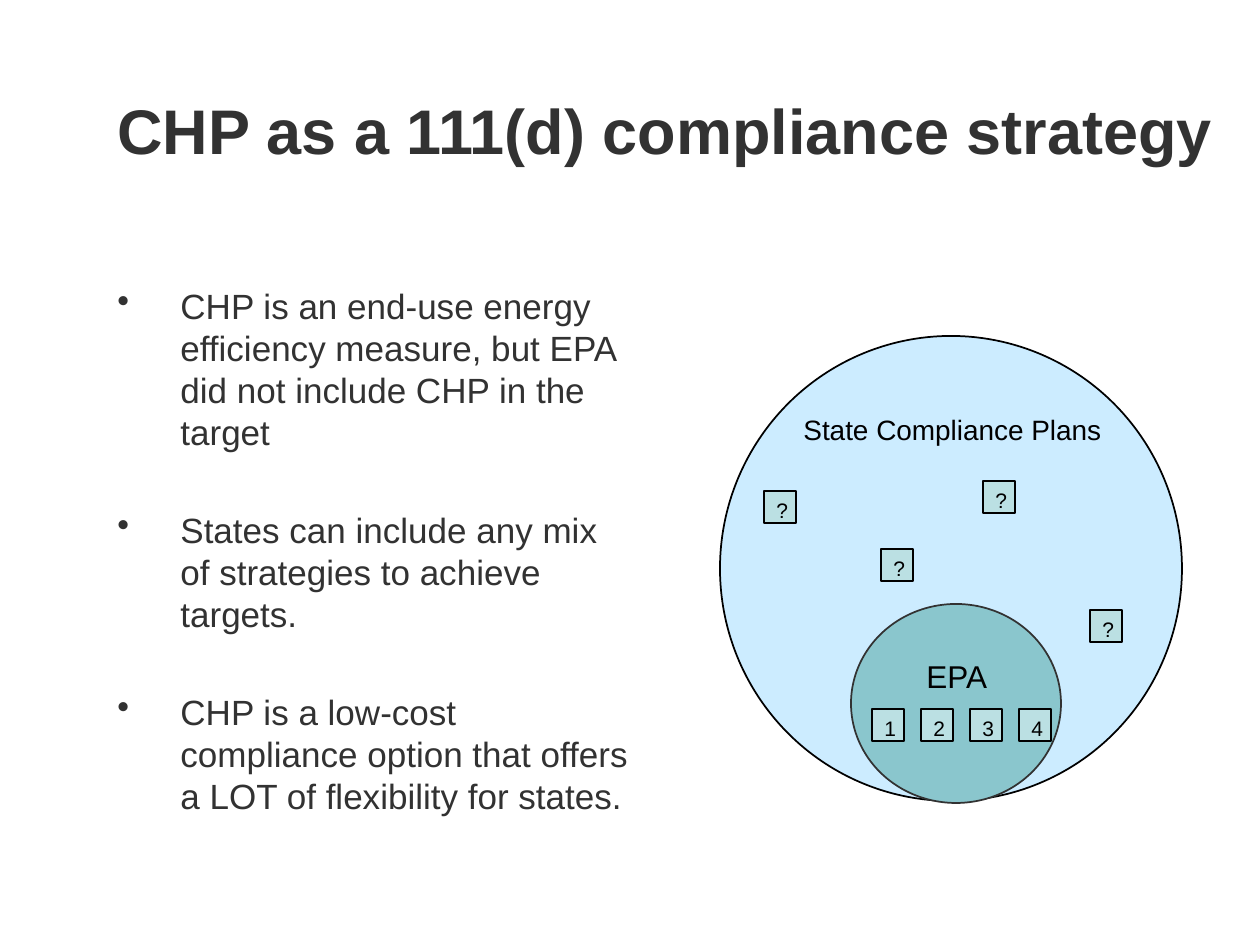
"""Build the slide on CHP as a 111(d) compliance strategy."""
from dataclasses import dataclass

import lxml.etree
import pptx
import pptx.dml.color
import pptx.enum.shapes
import pptx.enum.text
import pptx.oxml.ns
import pptx.shapes.autoshape
import pptx.slide
import pptx.util

EMU_PER_PX = 914400 / 126
TILE_SIZE = 32
TILE_PITCH = 49
INDENT = 63


@dataclass(frozen=True)
class Theme:
    font: str = "Arial"
    ink: str = "323232"
    black: str = "000000"
    state: str = "CCECFF"
    epa: str = "8AC6CD"
    tile: str = "BBE0E3"
    title_size: int = 36
    title_pitch: int = 44
    body_size: int = 20
    body_pitch: int = 24
    body_gap: int = 32
    epa_size: int = 18
    state_size: int = 16
    tile_size: int = 12
    circle_line: float = 1
    tile_line: float = 0.75


@dataclass(frozen=True)
class Box:
    left: int
    top: int
    width: int
    height: int


@dataclass(frozen=True)
class Circle:
    box: Box
    fill: str
    line: str


@dataclass(frozen=True)
class Label:
    box: Box
    text: str
    size: int


@dataclass(frozen=True)
class Tile:
    left: int
    top: int
    text: str


THEME = Theme()
TITLE = "CHP as a 111(d) compliance strategy"
BULLETS = (
    "CHP is an end-use energy efficiency measure, but EPA did not include CHP in the target",
    "States can include any mix of strategies to achieve targets.",
    "CHP is a low-cost compliance option that offers a LOT of flexibility for states.",
)
STATE_CIRCLE = Circle(Box(720, 336, 462, 465), THEME.state, THEME.black)
EPA_CIRCLE = Circle(Box(851, 604, 210, 199), THEME.epa, THEME.ink)
LABELS = (
    Label(Box(914, 651, 105, 50), "EPA", THEME.epa_size),
    Label(Box(791, 406, 410, 47), "State Compliance Plans", THEME.state_size),
)
EPA_TILES = tuple(Tile(872 + TILE_PITCH * i, 709, str(i + 1)) for i in range(4))
STATE_TILES = tuple(
    Tile(left, top, "?")
    for left, top in ((764, 491), (983, 481), (881, 549), (1090, 610))
)


def px(length: int) -> pptx.util.Emu:
    return pptx.util.Emu(round(length * EMU_PER_PX))


def edges(box: Box) -> tuple[pptx.util.Emu, ...]:
    return px(box.left), px(box.top), px(box.width), px(box.height)


def rgb(value: str) -> pptx.dml.color.RGBColor:
    return pptx.dml.color.RGBColor.from_string(value)


def add_run(paragraph, text: str, size: int, color: str, bold: bool = False) -> None:
    run = paragraph.add_run()
    run.text = text
    run.font.name = THEME.font
    run.font.size = pptx.util.Pt(size)
    run.font.bold = bold
    run.font.color.rgb = rgb(color)


def prepare_frame(shape):
    frame = shape.text_frame
    frame.word_wrap = True
    frame.vertical_anchor = pptx.enum.text.MSO_ANCHOR.TOP
    frame.paragraphs[0].alignment = pptx.enum.text.PP_ALIGN.LEFT
    return frame


def add_text_frame(slide: pptx.slide.Slide, box: Box):
    return prepare_frame(slide.shapes.add_textbox(*edges(box)))


def add_outlined(
    slide: pptx.slide.Slide,
    kind: pptx.enum.shapes.MSO_SHAPE,
    box: Box,
    fill: str,
    line: str,
    weight: float,
) -> pptx.shapes.autoshape.Shape:
    shape = slide.shapes.add_shape(kind, *edges(box))
    shape.shadow.inherit = False
    shape.fill.solid()
    shape.fill.fore_color.rgb = rgb(fill)
    shape.line.color.rgb = rgb(line)
    shape.line.width = pptx.util.Pt(weight)
    return shape


def add_circle(slide: pptx.slide.Slide, circle: Circle) -> None:
    oval = pptx.enum.shapes.MSO_SHAPE.OVAL
    add_outlined(slide, oval, circle.box, circle.fill, circle.line, THEME.circle_line)


def add_tile(slide: pptx.slide.Slide, tile: Tile) -> None:
    box = Box(tile.left, tile.top, TILE_SIZE, TILE_SIZE)
    rectangle = pptx.enum.shapes.MSO_SHAPE.RECTANGLE
    shape = add_outlined(slide, rectangle, box, THEME.tile, THEME.black, THEME.tile_line)
    add_run(prepare_frame(shape).paragraphs[0], tile.text, THEME.tile_size, THEME.black)


def add_label(slide: pptx.slide.Slide, label: Label) -> None:
    frame = add_text_frame(slide, label.box)
    add_run(frame.paragraphs[0], label.text, label.size, THEME.black)


def add_title(slide: pptx.slide.Slide) -> None:
    paragraph = add_text_frame(slide, Box(105, 84, 1155, 158)).paragraphs[0]
    paragraph.line_spacing = pptx.util.Pt(THEME.title_pitch)
    add_run(paragraph, TITLE, THEME.title_size, THEME.ink, bold=True)


def add_bullets(slide: pptx.slide.Slide) -> None:
    frame = add_text_frame(slide, Box(105, 278, 536, 514))
    for index, text in enumerate(BULLETS):
        paragraph = frame.add_paragraph() if index else frame.paragraphs[0]
        paragraph.line_spacing = pptx.util.Pt(THEME.body_pitch)
        if index:
            paragraph.space_before = pptx.util.Pt(THEME.body_gap)
        properties = paragraph._p.get_or_add_pPr()
        properties.set("marL", str(px(INDENT)))
        properties.set("indent", str(-px(INDENT)))
        bullet = lxml.etree.SubElement(properties, pptx.oxml.ns.qn("a:buChar"))
        bullet.set("char", "•")
        add_run(paragraph, text, THEME.body_size, THEME.ink)


def main() -> None:
    presentation = pptx.Presentation()
    presentation.slide_width = px(1260)
    presentation.slide_height = px(945)
    slide = presentation.slides.add_slide(presentation.slide_layouts[6])
    add_circle(slide, STATE_CIRCLE)
    add_title(slide)
    add_bullets(slide)
    add_circle(slide, EPA_CIRCLE)
    for tile in EPA_TILES:
        add_tile(slide, tile)
    for label in LABELS:
        add_label(slide, label)
    for tile in STATE_TILES:
        add_tile(slide, tile)
    presentation.save("out.pptx")


if __name__ == "__main__":
    main()
